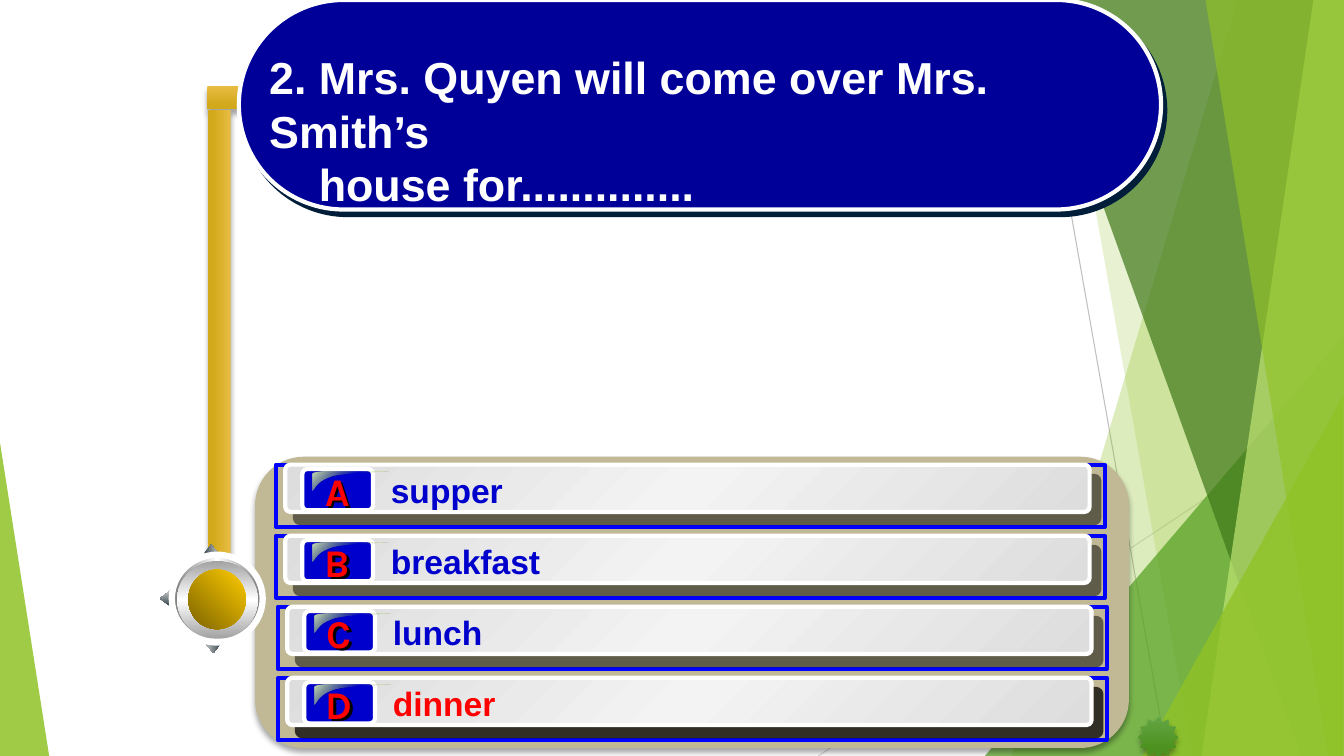
"""Build the quiz slide with a question banner, four answer rows and a knob on a pole."""
from dataclasses import dataclass
from typing import NamedTuple, Optional, Sequence

import lxml.etree
import pptx
import pptx.dml.color
import pptx.enum.shapes
import pptx.enum.text
import pptx.oxml.ns
import pptx.shapes.autoshape
import pptx.slide
import pptx.util

Cm, Pt, qn = pptx.util.Cm, pptx.util.Pt, pptx.oxml.ns.qn
MSO, ALIGN = pptx.enum.shapes.MSO_SHAPE, pptx.enum.text.PP_ALIGN
rgb = pptx.dml.color.RGBColor.from_string
Shape, Slide = pptx.shapes.autoshape.Shape, pptx.slide.Slide
Point = tuple[float, float]


class Fill(NamedTuple):
    colors: tuple[str, ...]
    angle: int = 0
    alpha: int = 100
    end: int = 100


class Line(NamedTuple):
    color: str
    width: float


class Shadow(NamedTuple):
    color: str
    alpha: int
    blur: float
    dist: float
    angle: int


class Box(NamedTuple):
    left: float
    top: float
    width: float
    height: float


class Facet(NamedTuple):
    top_x: float
    bottom_x: float
    fill: Fill


class Part(NamedTuple):
    kind: MSO
    box: Box
    fill: Optional[Fill]
    line: Optional[Line] = None
    shadow: Optional[Shadow] = None
    turn: int = 0
    adjust: tuple[float, ...] = ()


class Answer(NamedTuple):
    letter: str
    text: str
    color: str
    shift: float
    shadow: Shadow


@dataclass(frozen=True)
class Theme:
    font: str = "Arial"
    badge_font: str = "Karla"
    question_size: int = 32
    answer_size: int = 24
    badge_size: int = 28
    white: str = "FFFFFF"
    blue: str = "0000CC"
    red: str = "FF0000"
    frame: Line = Line("0000FF", 3)
    rim: Line = Line("FFFFFF", 3)
    knob_rim: Line = Line("FFFFFF", 4.5)
    banner: Fill = Fill(("000099",))
    panel: Fill = Fill(("C1B995",))
    badge: Fill = Fill(("0000CC",))
    gold: Fill = Fill(("E7BC43", "D2A91B"), 90, end=78)
    arrow: Fill = Fill(("2C3C43", "CECFD0"))
    star: Fill = Fill(("63A545", "4D921E"), 90, end=78)
    outer_knob: Fill = Fill(("767676", "FFFFFF", "767676"), 90)
    inner_knob: Fill = Fill(("A2A2A2", "FFFFFF", "A2A2A2"))
    knob: Fill = Fill(("FFCC00", "7C6300"), 45)
    bar: Fill = Fill(("DDDDDD", "F3F3F3", "DDDDDD"), 45)
    gloss: Fill = Fill(("CCE0B6", "90C226", "CCE0B6"), 45, alpha=0)
    soft: Shadow = Shadow("000000", 35, 4, 3, 90)
    banner_shadow: Shadow = Shadow("001D3A", 100, 0, 5, 53)
    row_shadow: Shadow = Shadow("000000", 50, 0, 10.6, 49)
    deep_shadow: Shadow = Shadow("000000", 75, 0, 10.6, 49)
    letter_shadow: Shadow = Shadow("000000", 100, 0, 2.5, 45)


T = Theme()
WIDTH, HEIGHT = 33.87, 19.05
ROW, ROW_PITCH = Box(6.96, 11.71, 20.88, 1.57), 1.79
EDGES = (((26.04, 0, 29.41, HEIGHT), "BFBFBF"), ((WIDTH, 10.24, 20.62, HEIGHT), "D9D9D9"))
BACKDROP = (
    Facet(31.19, 25.5, Fill(("90C226",), alpha=30)),
    Facet(26.67, 30.05, Fill(("90C226",), alpha=20)),
    Part(MSO.ISOSCELES_TRIANGLE, Box(24.82, 8.46, 9.04, 10.59), Fill(("54A021",), alpha=72), adjust=(1,)),
    Facet(25.93, 32.79, Fill(("3F7819",), alpha=70)),
    Facet(33.1, 30.28, Fill(("C0E474",), alpha=70)),
    Facet(30.38, 33.48, Fill(("90C226",), alpha=65)),
    Part(MSO.ISOSCELES_TRIANGLE, Box(28.8, 9.98, 5.05, 9.07), Fill(("90C226",), alpha=80), adjust=(1,)),
    Part(MSO.ISOSCELES_TRIANGLE, Box(0, 11.15, 1.24, 7.9), Fill(("90C226",), alpha=85), adjust=(0,)),
)
ARROWS = ((Box(5.11, 13.72, 0.43, 0.28), 0), (Box(5.16, 16.18, 0.43, 0.28), 180),
          (Box(3.96, 14.94, 0.41, 0.28), 270))
PARTS = (
    Part(MSO.ROUNDED_RECTANGLE, Box(6.43, 11.51, 22.02, 7.34), T.panel, None, T.soft),
    Part(MSO.RECTANGLE, Box(5.23, 2.18, 4.37, 0.58), T.gold, None, T.soft),
    Part(MSO.RECTANGLE, Box(-0.43, 8.43, 11.91, 0.58), T.gold, None, T.soft, 90),
    Part(MSO.ROUNDED_RECTANGLE, Box(6.02, 0, 23.24, 5.28), T.banner, T.rim, T.banner_shadow, adjust=(0.5,)),
    *(Part(MSO.UP_ARROW, box, T.arrow, turn=turn, adjust=(0.52, 1)) for box, turn in ARROWS),
    Part(MSO.OVAL, Box(4.37, 13.94, 2.21, 2.29), T.outer_knob, T.knob_rim, turn=90),
    Part(MSO.OVAL, Box(4.5, 14.1, 1.96, 2.03), T.inner_knob, turn=90),
    Part(MSO.OVAL, Box(4.72, 14.38, 1.5, 1.45), T.knob, turn=90),
    Part(MSO.STAR_12_POINT, Box(28.68, 18.06, 1.02, 1.04), T.star, None, T.soft),
)
ANSWERS = (Answer("A", "supper", T.blue, 0, T.row_shadow), Answer("B", "breakfast", T.blue, 0, T.row_shadow),
           Answer("C", "lunch", T.blue, 0.05, T.row_shadow), Answer("D", "dinner", T.red, 0.05, T.deep_shadow))


def add_color(parent: lxml.etree._Element, color: str, alpha: int) -> None:
    clr = lxml.etree.SubElement(parent, qn("a:srgbClr"), val=color)
    lxml.etree.SubElement(clr, qn("a:alpha"), val=str(alpha * 1000))


def paint(sp: Shape, fill: Optional[Fill], line: Optional[Line] = None, shadow: Optional[Shadow] = None) -> None:
    props = sp.element.spPr
    if fill is None:
        sp.fill.background()
    elif len(fill.colors) == 1:
        sp.fill.solid()
        solid = props.find(qn("a:solidFill"))
        for child in list(solid):
            solid.remove(child)
        add_color(solid, fill.colors[0], fill.alpha)
    else:
        sp.fill.gradient()
        grad = props.find(qn("a:gradFill"))
        stops, last = grad.find(qn("a:gsLst")), len(fill.colors) - 1
        for gs in list(stops):
            stops.remove(gs)
        for i, color in enumerate(fill.colors):
            gs = lxml.etree.SubElement(stops, qn("a:gs"), pos=str(i * fill.end * 1000 // last))
            add_color(gs, color, fill.alpha if 0 < i < last else 100)
        grad.find(qn("a:lin")).set("ang", str(fill.angle * 60000))
    if line is None:
        sp.line.fill.background()
    else:
        sp.line.color.rgb, sp.line.width = rgb(line.color), Pt(line.width)
    sp.shadow.inherit = False
    if shadow is not None:
        outer = lxml.etree.SubElement(
            props.find(qn("a:effectLst")), qn("a:outerShdw"), blurRad=str(Pt(shadow.blur)),
            dist=str(Pt(shadow.dist)), dir=str(shadow.angle * 60000), algn="ctr", rotWithShape="0")
        add_color(outer, shadow.color, shadow.alpha)


def add_part(slide: Slide, part: Part, x: float = 0, y: float = 0) -> None:
    left, top, width, height = part.box
    sp = slide.shapes.add_shape(part.kind, Cm(x + left), Cm(y + top), Cm(width), Cm(height))
    sp.rotation = part.turn
    for i, value in enumerate(part.adjust):
        sp.adjustments[i] = value
    paint(sp, part.fill, part.line, part.shadow)


def add_outline(slide: Slide, points: Sequence[Point], fill: Fill) -> None:
    start, *rest = [(Cm(x), Cm(y)) for x, y in points]
    builder = slide.shapes.build_freeform(*start)
    builder.add_line_segments(rest, close=True)
    paint(builder.convert_to_shape(), fill)


def curve(*controls: Point) -> list[Point]:
    weights = [((1 - t) ** 3, 3 * t * (1 - t) ** 2, 3 * t * t * (1 - t), t ** 3) for t in (i / 10 for i in range(11))]
    return [(sum(w * x for w, (x, _) in zip(ws, controls)), sum(w * y for w, (_, y) in zip(ws, controls)))
            for ws in weights]


GLOSS = (curve((1.3, 0.18), (1.09, 0.18), (0.91, 0.2), (0.91, 0.25))
         + curve((0.91, 0.66), (0.99, 0.66), (0.97, 0.43), (1.45, 0.3))
         + curve((1.45, 0.3), (1.93, 0.2), (2.87, 0.2), (2.84, 0.18)))


def set_text(sp: Shape, text: str, font: str, size: int, color: str, align: ALIGN = ALIGN.LEFT) -> None:
    tf = sp.text_frame
    tf.text, tf.word_wrap = text, True
    tf.auto_size = pptx.enum.text.MSO_AUTO_SIZE.NONE
    tf.vertical_anchor = pptx.enum.text.MSO_ANCHOR.TOP
    for p in tf.paragraphs:
        p.alignment, p.line_spacing, p.space_before = align, 1.0, Pt(0)
        for r in p.runs:
            r.font.name, r.font.size, r.font.bold, r.font.color.rgb = font, Pt(size), True, rgb(color)


def add_backdrop(slide: Slide) -> None:
    for ends, color in EDGES:
        ln = slide.shapes.add_connector(pptx.enum.shapes.MSO_CONNECTOR.STRAIGHT, *map(Cm, ends))
        ln.line.color.rgb, ln.line.width = rgb(color), Pt(0.75)
        lxml.etree.SubElement(ln.element.spPr, qn("a:effectLst"))
    for item in BACKDROP:
        if isinstance(item, Part):
            add_part(slide, item)
        else:
            corners = ((item.top_x, 0), (WIDTH, 0), (WIDTH, HEIGHT), (item.bottom_x, HEIGHT))
            add_outline(slide, corners, item.fill)


def add_answer(slide: Slide, answer: Answer, x: float, y: float) -> None:
    bar, badge = Box(0.23, 0, 20.27, 1.19), Box(0.66, 0.11, 1.78, 1.04)
    add_part(slide, Part(MSO.RECTANGLE, Box(0, 0, ROW.width, ROW.height), None, T.frame), x, y)
    add_part(slide, Part(MSO.ROUNDED_RECTANGLE, bar, T.bar, T.rim, answer.shadow, adjust=(0.11,)), x, y)
    add_part(slide, Part(MSO.ROUNDED_RECTANGLE, badge, T.badge, T.rim, adjust=(0.12,)), x, y)
    add_outline(slide, [(x + px, y + py) for px, py in GLOSS], T.gloss)
    letter = slide.shapes.add_textbox(Cm(x + 0.84), Cm(y - 0.07), Cm(1.4), Cm(1.45))
    set_text(letter, answer.letter, T.badge_font, T.badge_size, T.red, ALIGN.CENTER)
    paint(letter, None, None, T.letter_shadow)
    text = slide.shapes.add_textbox(Cm(x + 2.64), Cm(y), Cm(18.06), Cm(1.27))
    set_text(text, answer.text, T.font, T.answer_size, answer.color)


def add_question(slide: Slide) -> None:
    sp = slide.shapes.title
    sp.left, sp.top, sp.width, sp.height = map(Cm, (6.53, 1.12, 21.51, 2.97))
    set_text(sp, "2. Mrs. Quyen will come over Mrs. Smith’s\nhouse for..............",
             T.font, T.question_size, T.white)
    list(sp.element.iter(qn("a:pPr")))[1].set("marL", str(Cm(1.25)))
    slide.shapes.element.append(sp.element)


def main() -> None:
    prs = pptx.Presentation()
    prs.slide_width, prs.slide_height = Cm(WIDTH), Cm(HEIGHT)
    slide = prs.slides.add_slide(prs.slide_layouts[5])
    add_backdrop(slide)
    for part in PARTS:
        add_part(slide, part)
    for i, answer in enumerate(ANSWERS):
        add_answer(slide, answer, ROW.left + answer.shift, ROW.top + i * ROW_PITCH)
    add_question(slide)
    prs.save("out.pptx")


if __name__ == "__main__":
    main()
